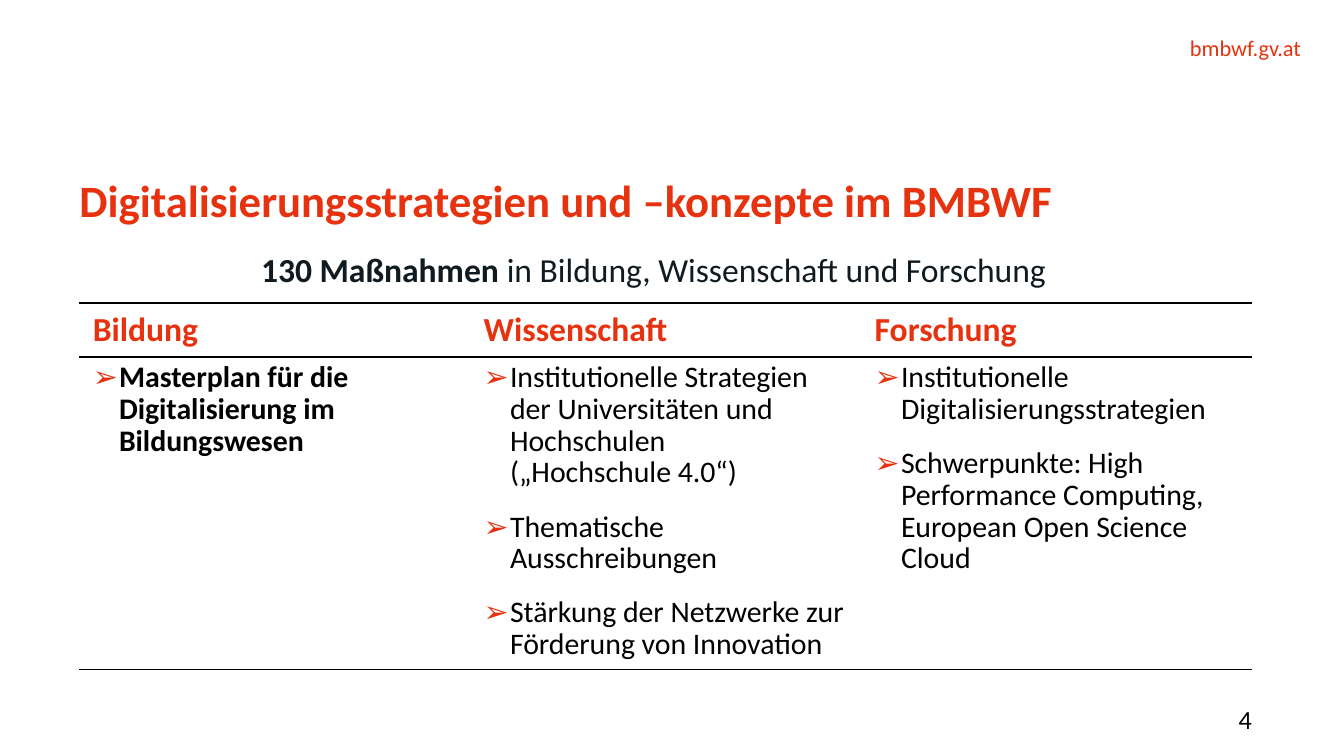
from dataclasses import dataclass
from typing import NamedTuple

from lxml.etree import SubElement
from pptx import Presentation
from pptx.dml.color import RGBColor as Color
from pptx.enum.text import MSO_ANCHOR as Anchor, PP_ALIGN as Align
from pptx.oxml import parse_xml
from pptx.oxml.ns import nsdecls, qn
from pptx.slide import Slide
from pptx.table import _Cell as Cell
from pptx.text.text import _Paragraph as Paragraph
from pptx.util import Pt


@dataclass(frozen=True)
class Theme:
    font: str = "Calibri"
    accent: str = "E6320F"
    ink: str = "000000"
    body: str = "0F1B20"
    title_size: float = 24
    heading_size: float = 18
    list_size: float = 16
    number_size: float = 14
    address_size: float = 12
    rule: float = 1


class Span(NamedTuple):
    text: str
    size: float
    color: str
    bold: bool = False


class Label(NamedTuple):
    left: float
    top: float
    width: float
    height: float
    spans: list[Span]
    align: Align = Align.LEFT
    anchor: Anchor = Anchor.TOP
    leading: float | None = None


class Column(NamedTuple):
    heading: str
    points: list[str]
    bold: bool = False


THEME = Theme()
MARGIN = 42.5
CONTENT_WIDTH = 628.4
TABLE_TOP = 162.2
HEADING_HEIGHT = 29.2
LIST_HEIGHT = 167
BULLET_INDENT = 14.1

LABELS = [
    Label(523.5, 18.3, 173.5, 14.5,
          [Span("bmbwf.gv.at", THEME.address_size, THEME.accent)], Align.RIGHT),
    Label(MARGIN, 91.5, CONTENT_WIDTH, 49,
          [Span("Digitalisierungsstrategien und –konzepte im BMBWF",
                THEME.title_size, THEME.accent, True)], leading=30),
    Label(595.2, 377.5, 75.5, 16,
          [Span("4", THEME.number_size, THEME.ink)], Align.RIGHT, Anchor.MIDDLE),
    Label(MARGIN, 133.5, 615.5, 234,
          [Span("130 Maßnahmen ", THEME.heading_size, THEME.body, True),
           Span("in Bildung, Wissenschaft und Forschung",
                THEME.heading_size, THEME.body)], Align.CENTER),
]

COLUMNS = [
    Column("Bildung", ["Masterplan für die Digitalisierung im Bildungswesen"], True),
    Column("Wissenschaft", [
        "Institutionelle Strategien der Universitäten und Hochschulen \n(„Hochschule 4.0“)",
        "Thematische Ausschreibungen",
        "Stärkung der Netzwerke zur Förderung von Innovation",
    ]),
    Column("Forschung", [
        "Institutionelle Digitalisierungsstrategien",
        "Schwerpunkte: High Performance Computing, European Open Science Cloud",
    ]),
]


def add_span(paragraph: Paragraph, span: Span) -> None:
    for index, line in enumerate(span.text.split("\n")):
        if index:
            paragraph.add_line_break()
        run = paragraph.add_run()
        run.text = line
        run.font.name = THEME.font
        run.font.size = Pt(span.size)
        run.font.bold = span.bold
        run.font.color.rgb = Color.from_string(span.color)


def add_label(slide: Slide, label: Label) -> None:
    box = slide.shapes.add_textbox(
        Pt(label.left), Pt(label.top), Pt(label.width), Pt(label.height))
    frame = box.text_frame
    frame.word_wrap = True
    frame.vertical_anchor = label.anchor
    frame.margin_left = frame.margin_right = Pt(0)
    frame.margin_top = frame.margin_bottom = Pt(0)
    paragraph = frame.paragraphs[0]
    paragraph.alignment = label.align
    if label.leading:
        paragraph.line_spacing = Pt(label.leading)
    for span in label.spans:
        add_span(paragraph, span)


def style_cell(cell: Cell, ruled_sides: str) -> None:
    cell.fill.background()
    properties = cell._tc.get_or_add_tcPr()
    for index, side in enumerate("LRTB"):
        ruled = side in ruled_sides
        paint = (f'<a:solidFill><a:srgbClr val="{THEME.ink}"/></a:solidFill>'
                 if ruled else "<a:noFill/>")
        width = Pt(THEME.rule) if ruled else 0
        properties.insert(index, parse_xml(
            f'<a:ln{side} {nsdecls("a")} w="{width}">{paint}</a:ln{side}>'))


def add_bullet(paragraph: Paragraph, span: Span) -> None:
    properties = paragraph._p.get_or_add_pPr()
    properties.set("marL", str(Pt(BULLET_INDENT)))
    properties.set("indent", str(-Pt(BULLET_INDENT)))
    bullet_color = SubElement(properties, qn("a:buClr"))
    SubElement(bullet_color, qn("a:srgbClr"), val=THEME.accent)
    SubElement(properties, qn("a:buFont"), typeface=THEME.font)
    SubElement(properties, qn("a:buChar"), char="➢")
    paragraph.line_spacing = Pt(17)
    paragraph.space_after = Pt(12)
    add_span(paragraph, span)


def add_strategy_table(slide: Slide, columns: list[Column]) -> None:
    table = slide.shapes.add_table(
        2, len(columns), Pt(MARGIN), Pt(TABLE_TOP),
        Pt(CONTENT_WIDTH), Pt(HEADING_HEIGHT + LIST_HEIGHT)).table
    table.first_row = table.horz_banding = False
    table.rows[0].height = Pt(HEADING_HEIGHT)
    table.rows[1].height = Pt(LIST_HEIGHT)
    for index, column in enumerate(columns):
        table.columns[index].width = Pt(CONTENT_WIDTH / len(columns))
        heading, points = table.cell(0, index), table.cell(1, index)
        style_cell(heading, "TB")
        style_cell(points, "TB")
        add_span(heading.text_frame.paragraphs[0],
                 Span(column.heading, THEME.heading_size, THEME.accent, True))
        frame = points.text_frame
        for number, text in enumerate(column.points):
            paragraph = frame.add_paragraph() if number else frame.paragraphs[0]
            add_bullet(paragraph, Span(text, THEME.list_size, THEME.ink, column.bold))


def main() -> None:
    presentation = Presentation()
    presentation.slide_width = Pt(720)
    presentation.slide_height = Pt(405)
    slide = presentation.slides.add_slide(presentation.slide_layouts[6])
    for label in LABELS:
        add_label(slide, label)
    add_strategy_table(slide, COLUMNS)
    presentation.save("out.pptx")


if __name__ == "__main__":
    main()
